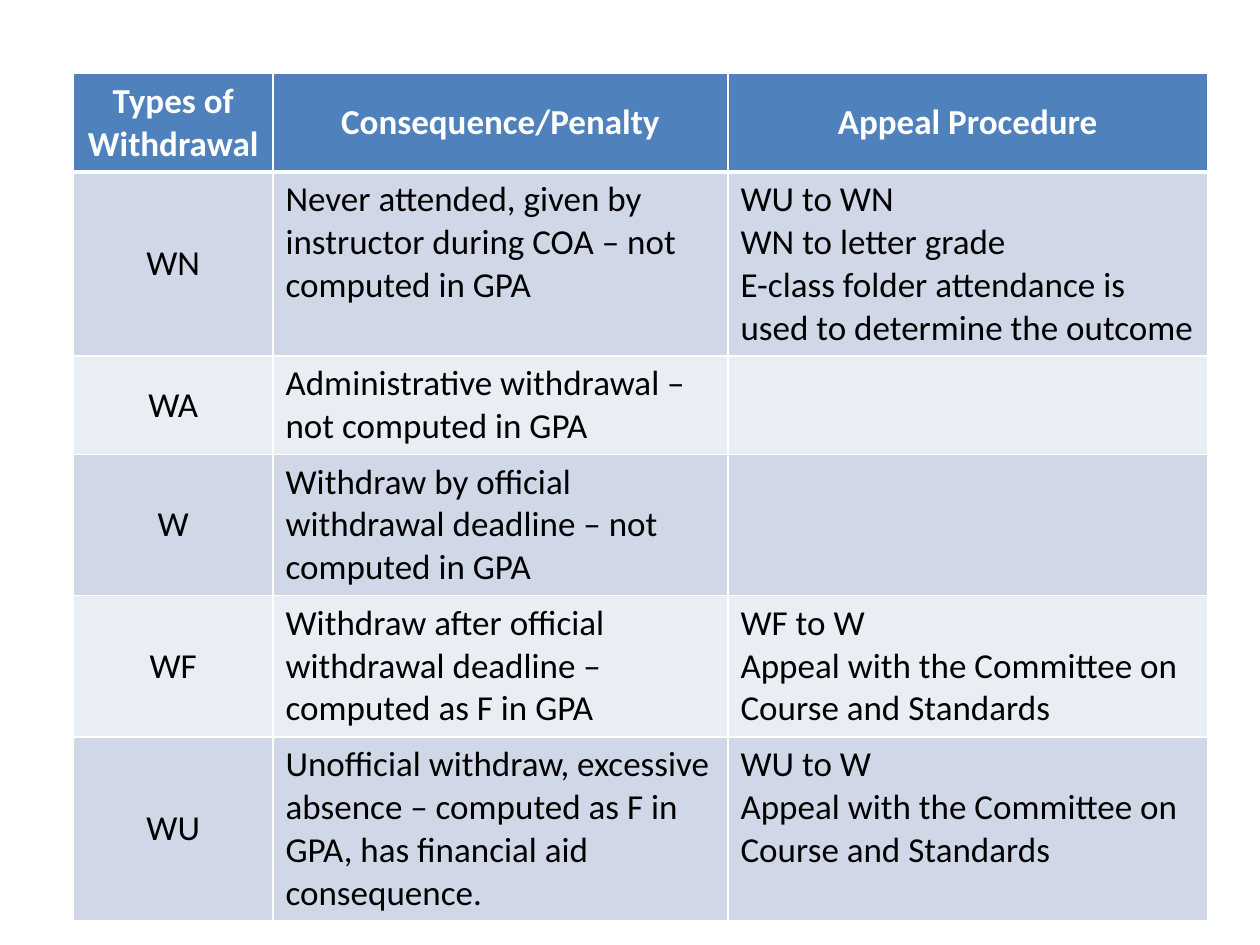
import pptx
import pptx.util
import pptx.dml.color
import pptx.enum.text
import pptx.oxml
import pptx.oxml.ns
from dataclasses import dataclass

Pt = pptx.util.Pt
ALIGN = pptx.enum.text.PP_ALIGN
ANCHOR = pptx.enum.text.MSO_ANCHOR


@dataclass(frozen=True)
class Theme:
    font: str = "Calibri"
    size: float = 20
    line_height: float = 24
    cell_padding: float = 7.2
    header: str = "4F81BD"
    bands: tuple = ("D0D8E8", "E9EDF4")
    light: str = "FFFFFF"
    dark: str = "000000"
    rule: float = 1
    header_rule: float = 3


def rgb(color):
    return pptx.dml.color.RGBColor.from_string(color)


def write_text(tf, text, *, font, size, color, bold=False, align=ALIGN.LEFT):
    """Write each line of text as one paragraph."""
    for i, line in enumerate(text.split("\n")):
        p = tf.paragraphs[0] if i == 0 else tf.add_paragraph()
        p.alignment = align
        r = p.add_run()
        r.text = line
        r.font.name, r.font.size, r.font.bold = font, Pt(size), bold
        r.font.color.rgb = rgb(color)


class SlideBuilder:
    def __init__(self, prs, theme):
        self.theme = theme
        self.s = prs.slides.add_slide(prs.slide_layouts[6])

    def borders(self, cell, **widths):
        """Draw the cell's edges; they must precede its fill in the XML."""
        tcPr = cell._tc.get_or_add_tcPr()
        for i, edge in enumerate("LRTB"):
            width = Pt(widths.get(edge, self.theme.rule))
            tcPr.insert(i, pptx.oxml.parse_xml(
                f'<a:ln{edge} {pptx.oxml.ns.nsdecls("a")} w="{width}"><a:solidFill>'
                f'<a:srgbClr val="{self.theme.light}"/></a:solidFill></a:ln{edge}>'))

    def cell(self, cell, text, row, col):
        t = self.theme
        header = row == 0
        centred = header or col == 0
        cell.fill.solid()
        cell.fill.fore_color.rgb = rgb(t.header if header else t.bands[(row - 1) % 2])
        if centred:
            cell.vertical_anchor = ANCHOR.MIDDLE
        if text:
            write_text(cell.text_frame, text, font=t.font, size=t.size, bold=header,
                       color=t.light if header else t.dark,
                       align=ALIGN.CENTER if centred else ALIGN.LEFT)
        # The heavy rule lies between the header and the first body row
        heavy = {0: {"B": t.header_rule}, 1: {"T": t.header_rule}}
        self.borders(cell, **heavy.get(row, {}))

    def table(self, rows, left, top, widths, line_counts):
        t = self.theme
        heights = [n * t.line_height + t.cell_padding for n in line_counts]
        sp = self.s.shapes.add_table(len(rows), len(widths), Pt(left), Pt(top),
                                     Pt(sum(widths)), Pt(sum(heights)))
        table = sp.table
        for column, width in zip(table.columns, widths):
            column.width = Pt(width)
        for row, height in zip(table.rows, heights):
            row.height = Pt(height)
        for i, row in enumerate(rows):
            for j, text in enumerate(row):
                self.cell(table.cell(i, j), text, i, j)


COMMITTEE = "Appeal with the Committee on Course and Standards"
WITHDRAWALS = [
    ("Types of Withdrawal", "Consequence/Penalty", "Appeal Procedure"),
    ("WN", "Never attended, given by instructor during COA – not computed in GPA",
     "WU to WN\nWN to letter grade\n"
     "E-class folder attendance is used to determine the outcome"),
    ("WA", "Administrative withdrawal – not computed in GPA", ""),
    ("W", "Withdraw by official withdrawal deadline – not computed in GPA", ""),
    ("WF", "Withdraw after official withdrawal deadline – computed as F in GPA",
     f"WF to W\n{COMMITTEE}"),
    ("WU", "Unofficial withdraw, excessive absence – computed as F in GPA, "
           "has financial aid consequence.", f"WU to W\n{COMMITTEE}"),
]


def main():
    prs = pptx.Presentation()
    prs.slide_width, prs.slide_height = Pt(720), Pt(540)
    # Withdrawal table
    builder = SlideBuilder(prs, Theme())
    builder.table(WITHDRAWALS, left=42, top=42, widths=(114, 260, 274),
                  line_counts=(2, 4, 2, 3, 3, 4))
    prs.save("out.pptx")


if __name__ == "__main__":
    main()
